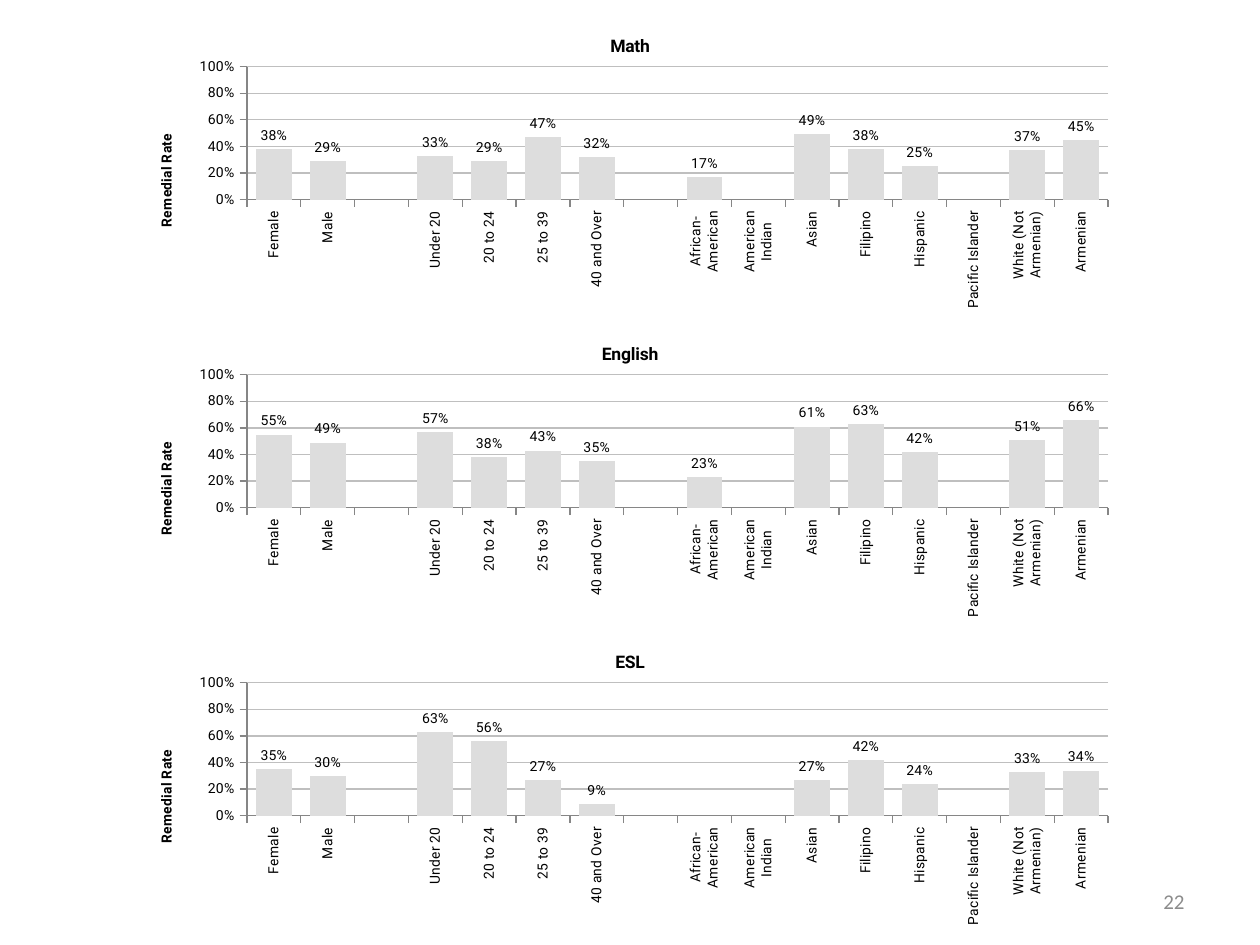
from dataclasses import dataclass

from lxml.etree import SubElement
from pptx import Presentation
from pptx.chart.data import CategoryChartData
from pptx.dml.color import RGBColor
from pptx.enum.chart import XL_CHART_TYPE, XL_LABEL_POSITION, XL_TICK_MARK
from pptx.enum.text import MSO_ANCHOR, PP_ALIGN
from pptx.oxml.ns import qn
from pptx.util import Cm, Pt


@dataclass(frozen=True)
class Theme:
    chart_font: str = "Roboto"
    page_font: str = "Calibri"
    text: RGBColor = RGBColor(0x00, 0x00, 0x00)
    bar: RGBColor = RGBColor(0xDD, 0xDD, 0xDD)
    grid: RGBColor = RGBColor(0xBF, 0xBF, 0xBF)
    axis: RGBColor = RGBColor(0x86, 0x86, 0x86)
    page_number: RGBColor = RGBColor(0x8C, 0x8C, 0x8C)
    label_size: Pt = Pt(8)
    title_size: Pt = Pt(10)
    page_number_size: Pt = Pt(12)
    line_width: Pt = Pt(0.75)


@dataclass(frozen=True)
class Box:
    left: float
    top: float
    width: float
    height: float

    def lengths(self):
        return Cm(self.left), Cm(self.top), Cm(self.width), Cm(self.height)


THEME = Theme()
GROUPS = [
    "Female", "Male", "",
    "Under 20", "20 to 24", "25 to 39", "40 and Over", "",
    "African-\nAmerican", "American\nIndian", "Asian", "Filipino", "Hispanic",
    "Pacific Islander", "White (Not\nArmenian)", "Armenian",
]
SUBJECTS = [
    ("Math", 9.57, [0.38, 0.29, None, 0.33, 0.29, 0.47, 0.32, None,
                    0.17, None, 0.49, 0.38, 0.25, None, 0.37, 0.45]),
    ("English", 9.4, [0.55, 0.49, None, 0.57, 0.38, 0.43, 0.35, None,
                      0.23, None, 0.61, 0.63, 0.42, None, 0.51, 0.66]),
    ("ESL", 9.67, [0.35, 0.3, None, 0.63, 0.56, 0.27, 0.09, None,
                   None, None, 0.27, 0.42, 0.24, None, 0.33, 0.34]),
]
FIRST_CHART = Box(2.67, 0.41, 20.07, 5.82)
CHART_PITCH = 6.21
PLOT = Box(2.31, 0.95, 17.36, 2.72)


def set_layout(parent, settings):
    layout = parent.find(qn("c:layout"))
    if layout is None:
        layout = SubElement(parent, qn("c:layout"))
        parent.remove(layout)
        text = parent.find(qn("c:tx"))
        parent.insert(0 if text is None else parent.index(text) + 1, layout)
    for child in list(layout):
        layout.remove(child)
    manual = SubElement(layout, qn("c:manualLayout"))
    for name, value in settings.items():
        SubElement(manual, qn(f"c:{name}")).set("val", str(value))


def edge_position(box, left, top):
    return {"xMode": "edge", "yMode": "edge",
            "x": left / box.width, "y": top / box.height}


def set_title(title, text, size, position):
    para = title.text_frame.paragraphs[0]
    para.text = text
    para.font.name = THEME.chart_font
    para.font.size = size
    para.font.bold = True
    para.font.color.rgb = THEME.text
    set_layout(title._element, position)


def style_line(line, color):
    line.color.rgb = color
    line.width = THEME.line_width


def style_axes(chart, box):
    for axis in (chart.category_axis, chart.value_axis):
        axis.major_tick_mark = XL_TICK_MARK.OUTSIDE
        axis.minor_tick_mark = XL_TICK_MARK.NONE
        axis.tick_labels.font.size = THEME.label_size
        style_line(axis.format.line, THEME.axis)

    names = chart.category_axis
    names.has_major_gridlines = False
    rotation = names._element.find(qn("c:txPr")).find(qn("a:bodyPr"))
    rotation.set("rot", "-5400000")
    rotation.set("vert", "horz")

    rates = chart.value_axis
    rates.minimum_scale, rates.maximum_scale, rates.major_unit = 0, 1, 0.2
    rates.tick_labels.number_format = "0%"
    rates.tick_labels.number_format_is_linked = False
    rates.has_major_gridlines = True
    style_line(rates.major_gridlines.format.line, THEME.grid)
    set_title(rates.axis_title, "Remedial Rate", THEME.label_size,
              edge_position(box, 0.44, 2.29))


def style_bars(plot):
    plot.gap_width = 50
    plot.vary_by_categories = False
    fill = plot.series[0].format.fill
    fill.solid()
    fill.fore_color.rgb = THEME.bar
    plot.has_data_labels = True
    labels = plot.data_labels
    labels.show_value = True
    labels.number_format = "0%"
    labels.number_format_is_linked = False
    labels.position = XL_LABEL_POSITION.OUTSIDE_END
    labels.font.size = THEME.label_size


def add_rate_chart(page, box, subject, title_left, rates):
    data = CategoryChartData(number_format="0%")
    data.categories = GROUPS
    data.add_series(subject, rates)
    frame = page.shapes.add_chart(XL_CHART_TYPE.COLUMN_CLUSTERED, *box.lengths(), data)
    chart = frame.chart
    chart.has_legend = False
    chart.font.name = THEME.chart_font
    chart.font.size = THEME.label_size
    chart.font.color.rgb = THEME.text
    set_title(chart.chart_title, subject, THEME.title_size,
              edge_position(box, title_left, 0.23))
    style_axes(chart, box)
    style_bars(chart.plots[0])
    set_layout(chart._chartSpace.chart.plotArea,
               {"layoutTarget": "inner", **edge_position(box, PLOT.left, PLOT.top),
                "w": PLOT.width / box.width, "h": PLOT.height / box.height})


def add_page_number(page, box, number):
    frame = page.shapes.add_textbox(*box.lengths()).text_frame
    frame.word_wrap = True
    frame.vertical_anchor = MSO_ANCHOR.MIDDLE
    para = frame.paragraphs[0]
    para.text = number
    para.alignment = PP_ALIGN.RIGHT
    para.font.name = THEME.page_font
    para.font.size = THEME.page_number_size
    para.font.color.rgb = THEME.page_number


def main():
    deck = Presentation()
    deck.slide_width, deck.slide_height = Cm(25.4), Cm(19.05)
    page = deck.slides.add_slide(deck.slide_layouts.get_by_name("Blank"))
    add_page_number(page, Box(18.21, 17.65, 5.92, 1.02), "22")
    for index, (subject, title_left, rates) in enumerate(SUBJECTS):
        box = Box(FIRST_CHART.left, FIRST_CHART.top + index * CHART_PITCH,
                  FIRST_CHART.width, FIRST_CHART.height)
        add_rate_chart(page, box, subject, title_left, rates)
    deck.save("out.pptx")


if __name__ == "__main__":
    main()
